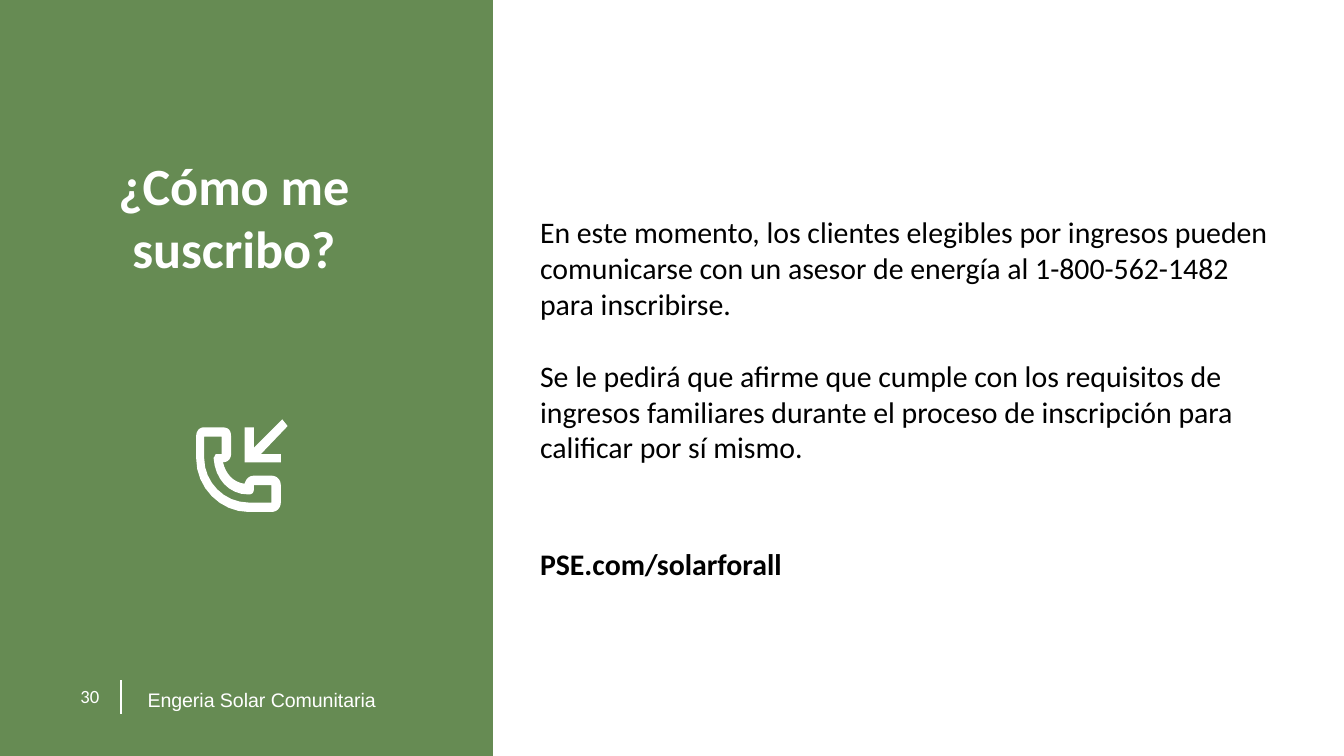
"""Build the community solar subscription slide."""
import lxml.etree
import pptx
import pptx.dml.color
import pptx.enum.shapes
import pptx.enum.text
import pptx.oxml.ns
import pptx.util

Inches, Pt = pptx.util.Inches, pptx.util.Pt
Align, Fit = pptx.enum.text.PP_ALIGN, pptx.enum.text.MSO_AUTO_SIZE

THEME = {
    "green": pptx.dml.color.RGBColor.from_string("668B53"),
    "white": pptx.dml.color.RGBColor.from_string("FFFFFF"),
    "black": pptx.dml.color.RGBColor.from_string("000000"),
    "heading": Pt(28),
    "body": Pt(16),
    "footer": Pt(10.5),
    "number": Pt(10),
    "rule": Pt(0.75),
    "font": "Calibri",
    "footer font": "Arial",
}
WIDTH, HEIGHT = 10, 10 * 9 / 16
PANEL_LEFT = 3.67
PANEL = (PANEL_LEFT, 0, WIDTH - PANEL_LEFT, HEIGHT)
DIVIDER = (0.9, 5.06, 0.9, 5.31)

TEXTS = [
    {"at": (1, 5.09, 5, 0.25), "size": "footer", "color": "white", "font": "footer font",
     "paras": [("Engeria Solar Comunitaria", {}, {"line_spacing": 0.9})]},
    {"at": (0.5, 5.05, 0.42, 0.27), "size": "number", "color": "white", "fit": Fit.SHAPE_TO_FIT_TEXT,
     "paras": [("30", {}, {})]},
    {"at": (0.53, 1.09, 2.42, 2), "size": "heading", "color": "white",
     "paras": [("¿Cómo me suscribo?", {"bold": True}, {"alignment": Align.CENTER})]},
    {"at": (3.92, 1.54, 5.62, 2.86), "size": "body", "color": "black", "fit": Fit.SHAPE_TO_FIT_TEXT,
     "paras": [
         ("En este momento, los clientes elegibles por ingresos pueden comunicarse con un asesor "
          "de energía al 1-800-562-1482 para inscribirse.", {}, {}),
         ("Se le pedirá que afirme que cumple con los requisitos de ingresos familiares durante "
          "el proceso de inscripción para calificar por sí mismo.", {}, {"space_before": Pt(19.5)}),
         ("PSE.com/solarforall", {"bold": True}, {"space_before": Pt(43.5), "space_after": Pt(24)}),
     ]},
]

ARROW = [[(2.09, 3.38), (1.94, 3.38), (2.14, 3.17), (2.1, 3.12), (1.89, 3.33),
          (1.89, 3.18), (1.82, 3.18), (1.82, 3.44), (2.09, 3.44)]]
HANDSET = [
    [(2.02, 3.54), (1.89, 3.54),
     ((1.85, 3.54), (1.83, 3.57), (1.82, 3.6)),
     ((1.74, 3.59), (1.68, 3.53), (1.66, 3.44)),
     ((1.7, 3.44), (1.72, 3.41), (1.72, 3.38)), (1.72, 3.25),
     ((1.72, 3.2), (1.7, 3.18), (1.65, 3.18)), (1.52, 3.18),
     ((1.49, 3.18), (1.46, 3.2), (1.46, 3.25)), (1.46, 3.41),
     ((1.46, 3.63), (1.64, 3.81), (1.85, 3.81)), (2.02, 3.81),
     ((2.06, 3.81), (2.09, 3.78), (2.09, 3.74)), (2.09, 3.61),
     ((2.09, 3.57), (2.06, 3.54), (2.02, 3.54))],
    [(1.85, 3.74),
     ((1.67, 3.74), (1.52, 3.59), (1.52, 3.41)), (1.52, 3.25),
     (1.65, 3.25), (1.65, 3.38), (1.62, 3.38),
     ((1.61, 3.38), (1.6, 3.38), (1.6, 3.39)),
     ((1.6, 3.4), (1.59, 3.4), (1.59, 3.41)),
     ((1.6, 3.56), (1.7, 3.68), (1.85, 3.68)),
     ((1.88, 3.68), (1.89, 3.66), (1.89, 3.64)), (1.89, 3.61),
     (2.02, 3.61), (2.02, 3.74)],
]


def apply(target, values):
    for name, value in values.items():
        setattr(target, name, value)


def paint(shape, color):
    shape.shadow.inherit = False
    shape.fill.solid()
    shape.fill.fore_color.rgb = THEME[color]
    shape.line.fill.background()


def flatten(outline, steps=8):
    points = [outline[0]]
    for part in outline[1:]:
        if not isinstance(part[0], tuple):
            points.append(part)
            continue
        curve = (points[-1], *part)
        for step in range(1, steps + 1):
            t = step / steps
            weights = ((1 - t) ** 3, 3 * t * (1 - t) ** 2, 3 * t * t * (1 - t), t ** 3)
            points.append(tuple(sum(w * p[axis] for w, p in zip(weights, curve)) for axis in (0, 1)))
    return [(Inches(x), Inches(y)) for x, y in points]


def add_outline(shapes, outlines):
    first, *others = [flatten(outline) for outline in outlines]
    builder = shapes.build_freeform(*first[0])
    builder.add_line_segments(first[1:], close=True)
    for points in others:
        builder.move_to(*points[0])
        builder.add_line_segments(points[1:], close=True)
    paint(builder.convert_to_shape(), "white")


def add_text(page, item):
    box = page.shapes.add_textbox(*map(Inches, item["at"]))
    frame = box.text_frame
    apply(frame, {"word_wrap": True, "auto_size": item.get("fit", Fit.NONE)})
    for index, (text, accents, layout) in enumerate(item["paras"]):
        para = frame.add_paragraph() if index else frame.paragraphs[0]
        apply(para, layout)
        span = para.add_run()
        span.text = text
        apply(span.font, {"name": THEME[item.get("font", "font")], "size": THEME[item["size"]], **accents})
        span.font.color.rgb = THEME[item["color"]]


def main():
    deck = pptx.Presentation()
    apply(deck, {"slide_width": Inches(WIDTH), "slide_height": Inches(HEIGHT)})
    page = deck.slides.add_slide(deck.slide_layouts[6])
    page.background.fill.solid()
    page.background.fill.fore_color.rgb = THEME["green"]
    paint(page.shapes.add_shape(pptx.enum.shapes.MSO_SHAPE.RECTANGLE, *map(Inches, PANEL)), "white")
    for item in TEXTS:
        add_text(page, item)
    divider = page.shapes.add_connector(pptx.enum.shapes.MSO_CONNECTOR.STRAIGHT, *map(Inches, DIVIDER))
    divider.line.color.rgb = THEME["white"]
    divider.line.width = THEME["rule"]
    lxml.etree.SubElement(divider._element.spPr, pptx.oxml.ns.qn("a:effectLst"))
    icon = page.shapes.add_group_shape()
    for outlines in (ARROW, HANDSET):
        add_outline(icon.shapes, outlines)
    deck.save("out.pptx")


if __name__ == "__main__":
    main()
